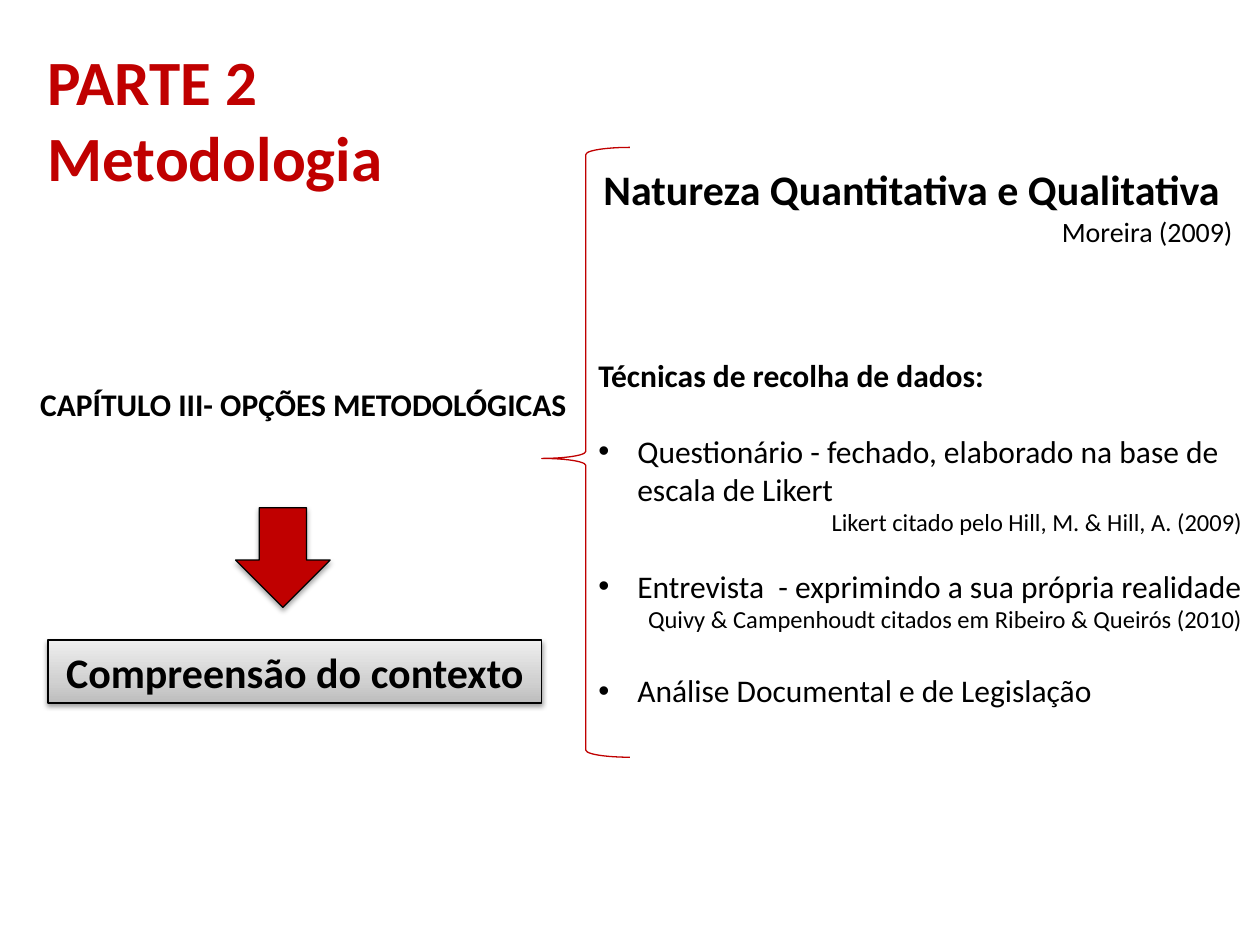
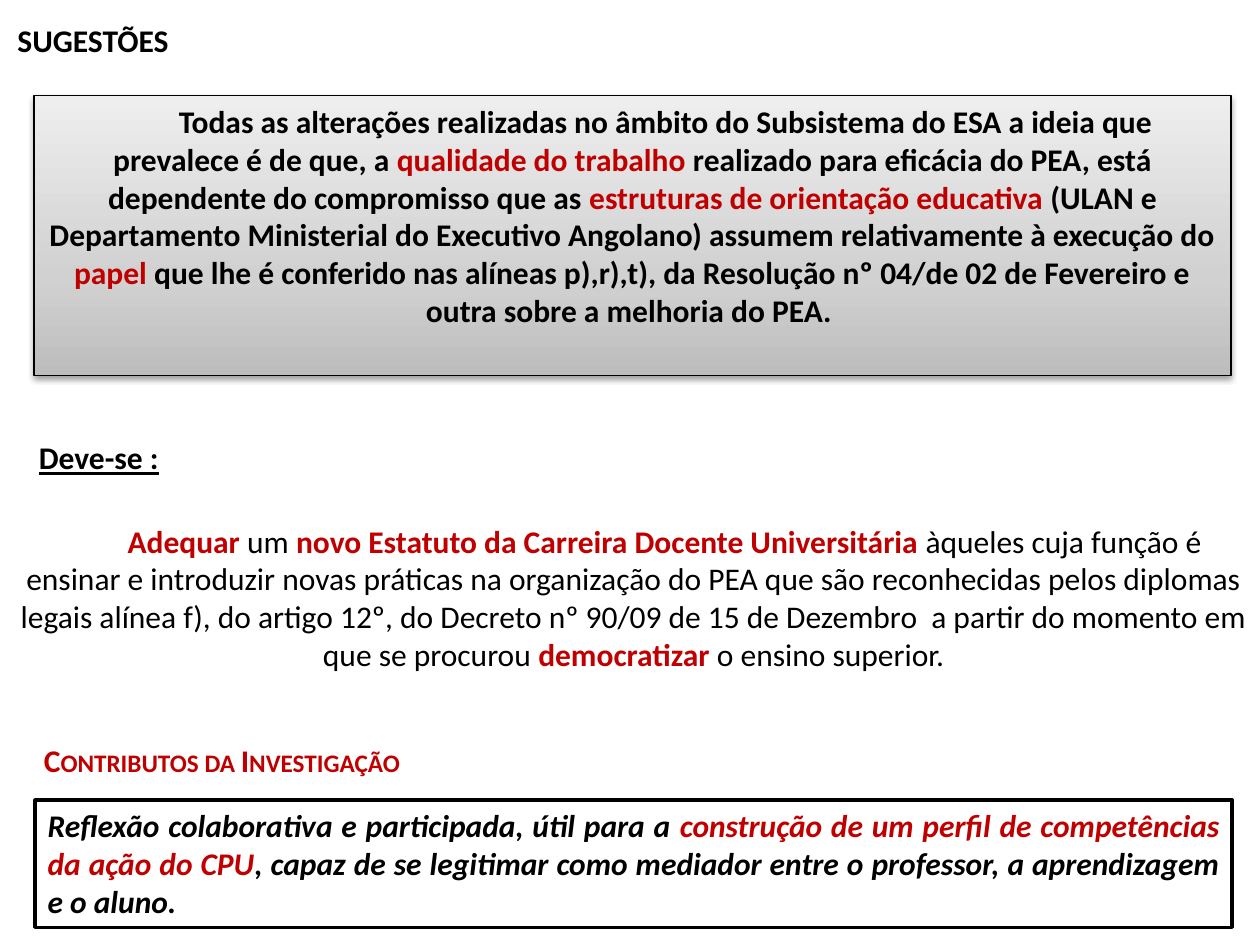
from dataclasses import dataclass
from typing import NamedTuple, Optional

from lxml import etree
from pptx import Presentation
from pptx.dml.color import RGBColor
from pptx.enum.shapes import MSO_SHAPE as SHAPE
from pptx.enum.text import MSO_ANCHOR as ANCHOR, PP_ALIGN as ALIGN
from pptx.oxml.ns import qn
from pptx.util import Inches, Pt

# Shared look
FONT = "Calibri"
COLORS = {
    "text": "000000",
    "accent": "C00000",
    "paper": "FFFFFF",
    "dark": "BDBDBD",
    "middle": "D1D1D1",
    "light": "EEEEEE",
}
GRADIENT = ((0, "dark"), (35, "middle"), (100, "light"))
BULLET_INDENT = 0.31


class Run(NamedTuple):
    text: str
    color: Optional[str] = None
    bold: Optional[bool] = None


@dataclass
class Para:
    runs: list[Run]
    size: int = 18
    bold: bool = False
    italic: bool = False
    underline: bool = False
    small_caps: bool = False
    color: str = "text"
    align: ALIGN = ALIGN.LEFT
    first_line: float = 0
    bullet: bool = False
    before: float = 0


@dataclass
class Block:
    left: float
    top: float
    width: float
    height: float
    paras: list[Para]


@dataclass
class Figure:
    kind: SHAPE
    left: float
    top: float
    width: float
    height: float
    fill: Optional[str] = None
    line: str = "text"
    line_width: float = 0.75
    shadow: int = 0
    adjustments: tuple = ()
    paras: tuple = ()


def rgb(name: str) -> RGBColor:
    return RGBColor.from_string(COLORS[name])


def accent(text: str, bold: Optional[bool] = None) -> Run:
    return Run(text, "accent", bold)


def line_of(text: str, **style) -> Para:
    return Para([Run(text)], **style)


def panel(left: float, top: float, width: float, height: float, *paras: Para) -> Figure:
    return Figure(SHAPE.RECTANGLE, left, top, width, height,
                  fill="gradient", shadow=38, paras=paras)


# Text
def set_indent(p, item: Para) -> None:
    pPr = p._p.get_or_add_pPr()
    if item.bullet:
        pPr.set("marL", str(Inches(BULLET_INDENT)))
        pPr.set("indent", str(-Inches(BULLET_INDENT)))
        font = etree.Element(qn("a:buFont"), typeface="Arial")
        mark = etree.Element(qn("a:buChar"), char="•")
        defaults = pPr.find(qn("a:defRPr"))
        defaults.addprevious(font)
        defaults.addprevious(mark)
    elif item.first_line:
        pPr.set("marL", "0")
        pPr.set("indent", str(Inches(item.first_line)))


def write(tf, paras) -> None:
    tf.word_wrap = True
    tf.vertical_anchor = ANCHOR.TOP
    for i, item in enumerate(paras):
        p = tf.add_paragraph() if i else tf.paragraphs[0]
        p.alignment = item.align
        p.space_before = Pt(item.before)
        font = p.font
        font.name, font.size = FONT, Pt(item.size)
        font.bold, font.italic = item.bold, item.italic
        font.underline = item.underline
        font.color.rgb = rgb(item.color)
        set_indent(p, item)
        for part in item.runs:
            r = p.add_run()
            r.text = part.text
            if part.color:
                r.font.color.rgb = rgb(part.color)
            if part.bold is not None:
                r.font.bold = part.bold
            if item.small_caps:
                r._r.get_or_add_rPr().set("cap", "small")


def add_block(slide, block: Block) -> None:
    box = slide.shapes.add_textbox(Inches(block.left), Inches(block.top),
                                   Inches(block.width), Inches(block.height))
    write(box.text_frame, block.paras)


# Shapes
def fill_gradient(sp) -> None:
    sp.fill.gradient()
    sp.fill.gradient_angle = 90
    stops = sp._element.spPr.find(qn("a:gradFill")).find(qn("a:gsLst"))
    for stop in list(stops):
        stops.remove(stop)
    for percent, name in GRADIENT:
        stop = etree.SubElement(stops, qn("a:gs"), pos=str(percent * 1000))
        etree.SubElement(stop, qn("a:srgbClr"), val=COLORS[name])


def add_shadow(sp, opacity: int) -> None:
    effects = sp._element.spPr.find(qn("a:effectLst"))
    shadow = etree.SubElement(effects, qn("a:outerShdw"), blurRad=str(Pt(3.1)),
                              dist=str(Pt(1.7)), dir="5400000", rotWithShape="0")
    color = etree.SubElement(shadow, qn("a:srgbClr"), val=COLORS["text"])
    etree.SubElement(color, qn("a:alpha"), val=str(opacity * 1000))


def add_figure(slide, fig: Figure) -> None:
    sp = slide.shapes.add_shape(fig.kind, Inches(fig.left), Inches(fig.top),
                                Inches(fig.width), Inches(fig.height))
    for i, value in enumerate(fig.adjustments):
        sp.adjustments[i] = value
    if fig.fill == "gradient":
        fill_gradient(sp)
    elif fig.fill:
        sp.fill.solid()
        sp.fill.fore_color.rgb = rgb(fig.fill)
    else:
        sp.fill.background()
    sp.line.color.rgb = rgb(fig.line)
    sp.line.width = Pt(fig.line_width)
    sp.shadow.inherit = False
    if fig.shadow:
        add_shadow(sp, fig.shadow)
    if fig.paras:
        write(sp.text_frame, fig.paras)


# Slide 1: methodology
METHODOLOGY = [
    Block(0.28, 0.29, 3.54, 1.31, [
        line_of(text, size=36, bold=True, color="accent")
        for text in ("PARTE 2", "Metodologia")
    ]),
    Block(0.22, 3.01, 4.49, 0.4,
          [line_of("CAPÍTULO III- OPÇÕES METODOLÓGICAS", bold=True)]),
    Figure(SHAPE.LEFT_BRACE, 4.3, 1.17, 0.7, 4.84, line="accent",
           adjustments=(0.08, 0.51)),
    Block(4.69, 1.25, 5.19, 1.18, [
        line_of("Natureza Quantitativa e Qualitativa", size=24, bold=True),
        line_of("Moreira (2009)", size=16, align=ALIGN.RIGHT),
    ]),
    panel(0.38, 5.08, 3.92, 0.5,
          line_of("Compreensão do contexto", size=24, bold=True, align=ALIGN.CENTER)),
    Block(4.65, 2.78, 5.31, 3.23, [
        line_of("Técnicas de recolha de dados:", bold=True),
        line_of("Questionário - fechado, elaborado na base de escala de Likert",
                bullet=True, before=21.5),
        line_of("Likert citado pelo Hill, M. & Hill, A. (2009)",
                size=14, align=ALIGN.RIGHT),
        line_of("Entrevista  - exprimindo a sua própria realidade",
                bullet=True, before=17),
        line_of("Quivy & Campenhoudt citados em Ribeiro & Queirós (2010)",
                size=14, align=ALIGN.RIGHT),
        line_of("Análise Documental e de Legislação", bullet=True, before=21.5),
    ]),
    Figure(SHAPE.DOWN_ARROW, 1.87, 4.03, 0.75, 0.79, fill="accent", shadow=35),
]

# Slide 2: suggestions
SUGGESTIONS = [
    panel(0.27, 0.76, 9.5, 2.22, Para([
        Run("Todas as alterações realizadas no âmbito do Subsistema do ESA a ideia "
            "que prevalece é de que, a "),
        accent("qualidade do trabalho"),
        Run(" realizado para eficácia do PEA, está dependente do compromisso que as "),
        accent("estruturas de orientação educativa "),
        Run("(ULAN e Departamento Ministerial do Executivo Angolano) assumem "
            "relativamente à execução do "),
        accent("papel"),
        Run(" que lhe é conferido nas alíneas p),r),t), da Resolução nº 04/de 02 de "
            "Fevereiro e outra sobre a melhoria do PEA. "),
    ], bold=True, align=ALIGN.CENTER, first_line=0.53)),
    Block(0.03, 4.09, 10, 1.31, [Para([
        accent("Adequar", True),
        Run(" um "),
        accent("novo Estatuto da Carreira Docente Universitária ", True),
        Run("àqueles cuja função é ensinar e introduzir novas práticas na organização "
            "do PEA que são reconhecidas pelos diplomas legais alínea f), do artigo "
            "12º, do Decreto nº 90/09 de 15 de Dezembro  a partir do momento em que "
            "se procurou "),
        accent("democratizar", True),
        Run(" o ensino superior."),
    ], align=ALIGN.CENTER, first_line=0.49)]),
    Block(0.25, 5.83, 4.4, 0.4, [
        line_of("Contributos da Investigação", bold=True, color="accent",
                small_caps=True),
    ]),
    Figure(SHAPE.RECTANGLE, 0.28, 6.35, 9.5, 1.01, fill="paper", line_width=2, paras=(
        Para([
            Run("Reflexão colaborativa e participada, útil para a "),
            accent("construção de um perfil de competências da ação do CPU"),
            Run(", capaz de se legitimar como mediador entre o professor, a "
                "aprendizagem e o aluno."),
        ], bold=True, italic=True, align=ALIGN.JUSTIFY),
    )),
    Block(0.21, 3.43, 1.97, 0.4, [line_of("Deve-se :", bold=True, underline=True)]),
    Block(0.04, 0.12, 2.99, 0.4, [line_of("SUGESTÕES", bold=True)]),
]


def main() -> None:
    prs = Presentation()
    prs.slide_width, prs.slide_height = Inches(10), Inches(7.5)
    for items in (METHODOLOGY, SUGGESTIONS):
        slide = prs.slides.add_slide(prs.slide_layouts[6])
        for item in items:
            draw = add_block if isinstance(item, Block) else add_figure
            draw(slide, item)
    prs.save("out.pptx")


if __name__ == "__main__":
    main()
